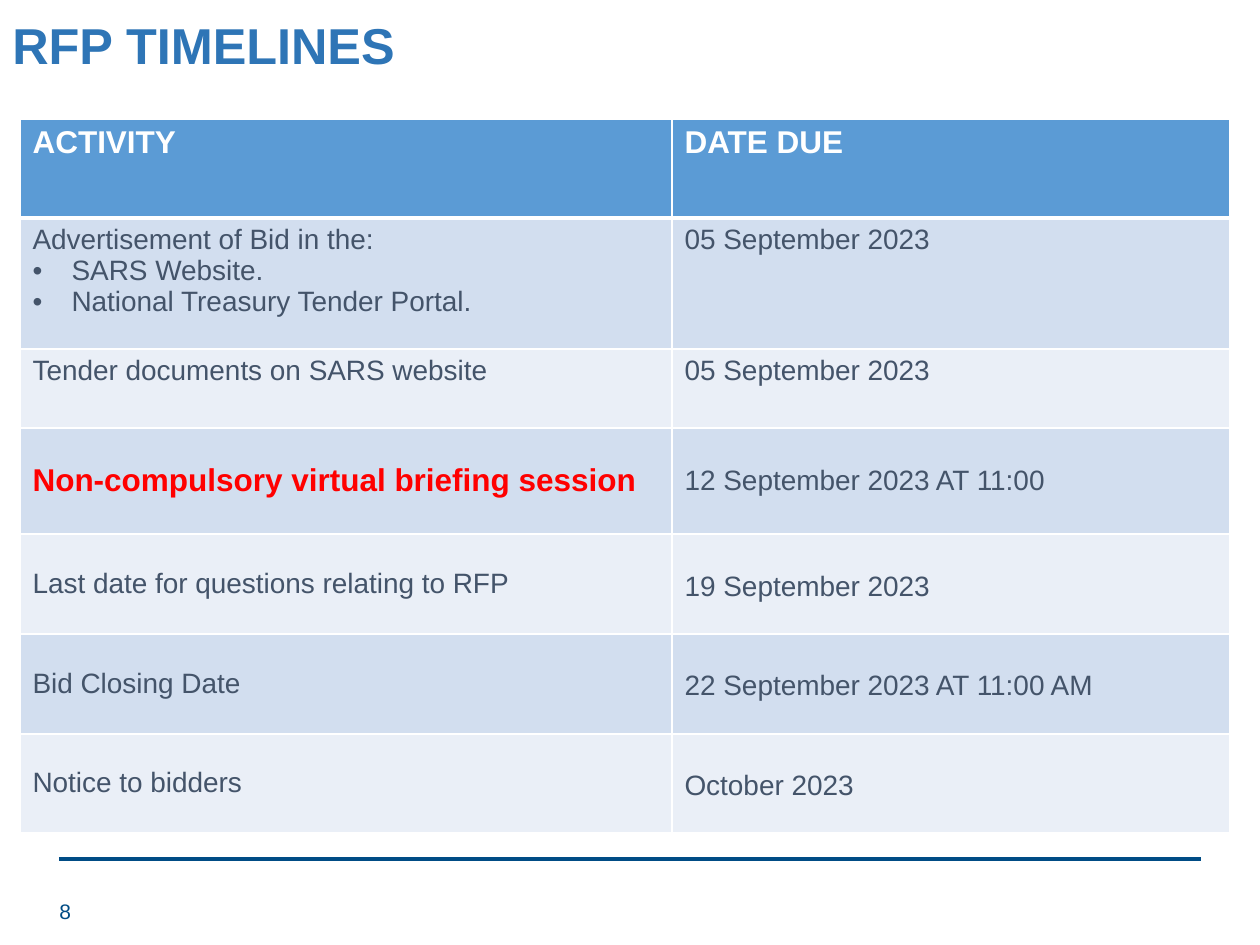
from lxml import etree
from pptx import Presentation
from pptx.dml.color import RGBColor
from pptx.enum.shapes import MSO_CONNECTOR
from pptx.enum.text import MSO_ANCHOR
from pptx.oxml.ns import qn
from pptx.util import Emu, Pt

PX = 914400 // 126
STRAIGHT = MSO_CONNECTOR.STRAIGHT
TOP, MIDDLE = MSO_ANCHOR.TOP, MSO_ANCHOR.MIDDLE

FONT = "Arial"
NAVY, TITLE_BLUE, SLATE, RED, WHITE = "004C85", "2E75B6", "44546A", "FF0000", "FFFFFF"
HEADER_FILL, BANDS = "5B9BD5", ("D2DEEF", "EAEFF7")

HEADINGS = ("ACTIVITY", "DATE DUE")
COLUMN_WIDTHS = (652, 558)
HEADER_HEIGHT = 99
BULLET_INDENT = 39
LOWERED_DATE_MARGIN = 37
# height, activity lines, date, whether the row sits lower in its cells
TIMELINE = (
    (131, ("Advertisement of Bid in the:", "• SARS Website.",
           "• National Treasury Tender Portal."), "05 September 2023", False),
    (79, ("Tender documents on SARS website",), "05 September 2023", False),
    (106, ("Non-compulsory virtual briefing session",), "12 September 2023 AT 11:00", True),
    (100, ("Last date for questions relating to RFP",), "19 September 2023", True),
    (100, ("Bid Closing Date",), "22 September 2023 AT 11:00 AM", True),
    (99, ("Notice to bidders",), "October 2023", True),
)
HIGHLIGHTED_ROW = 3


def px(length):
    return Emu(length * PX)


def color(hex_string):
    return RGBColor.from_string(hex_string)


def add_run(paragraph, text, size, hex_string, bold=False):
    run = paragraph.add_run()
    run.text = text
    font = run.font
    font.name, font.size, font.bold = FONT, Pt(size), bold
    font.color.rgb = color(hex_string)


def add_bullet(paragraph):
    properties = paragraph._p.get_or_add_pPr()
    properties.set("marL", str(px(BULLET_INDENT)))
    properties.set("indent", str(-px(BULLET_INDENT)))
    etree.SubElement(properties, qn("a:buFont"), typeface=FONT)
    etree.SubElement(properties, qn("a:buChar"), char="•")


def add_label(slide, box, text, size, hex_string, bold=False, anchor=TOP, spacing=1.0):
    frame = slide.shapes.add_textbox(*map(px, box)).text_frame
    frame.word_wrap = True
    frame.vertical_anchor = anchor
    frame.paragraphs[0].line_spacing = spacing
    add_run(frame.paragraphs[0], text, size, hex_string, bold)


def set_borders(cell, top=1, bottom=1):
    properties = cell._tc.get_or_add_tcPr()
    widths = (("a:lnL", 1), ("a:lnR", 1), ("a:lnT", top), ("a:lnB", bottom))
    for position, (tag, width) in enumerate(widths):
        line = etree.Element(qn(tag), w=str(Pt(width)))
        fill = etree.SubElement(line, qn("a:solidFill"))
        etree.SubElement(fill, qn("a:srgbClr"), val=WHITE)
        properties.insert(position, line)


def fill_cell(cell, lines, size, hex_string, fill, bold=False):
    cell.fill.solid()
    cell.fill.fore_color.rgb = color(fill)
    frame = cell.text_frame
    for number, line in enumerate(lines):
        paragraph = frame.add_paragraph() if number else frame.paragraphs[0]
        if line.startswith("• "):
            add_bullet(paragraph)
        add_run(paragraph, line.removeprefix("• "), size, hex_string, bold)


def add_timeline_table(slide, left, top):
    heights = [HEADER_HEIGHT] + [row[0] for row in TIMELINE]
    box = (left, top, sum(COLUMN_WIDTHS), sum(heights))
    table = slide.shapes.add_table(len(heights), len(COLUMN_WIDTHS), *map(px, box)).table
    for column, width in zip(table.columns, COLUMN_WIDTHS):
        column.width = px(width)
    for row, height in zip(table.rows, heights):
        row.height = px(height)

    for column, heading in enumerate(HEADINGS):
        cell = table.cell(0, column)
        fill_cell(cell, [heading], 18, WHITE, HEADER_FILL, bold=True)
        set_borders(cell, bottom=3)

    for number, (_, activity_lines, due, lowered) in enumerate(TIMELINE, start=1):
        activity, date = table.cell(number, 0), table.cell(number, 1)
        band = BANDS[(number - 1) % 2]
        highlighted = number == HIGHLIGHTED_ROW
        fill_cell(activity, activity_lines, 18 if highlighted else 16,
                  RED if highlighted else SLATE, band, bold=highlighted)
        fill_cell(date, [due], 16, SLATE, band)
        if lowered:
            activity.vertical_anchor = MIDDLE
            date.margin_top = px(LOWERED_DATE_MARGIN)
        for cell in (activity, date):
            set_borders(cell, top=3 if number == 1 else 1)


def add_footer(slide, left, top, width, page):
    rule = slide.shapes.add_connector(STRAIGHT, px(left), px(top), px(left + width), px(top))
    rule.line.color.rgb = color(NAVY)
    rule.line.width = Pt(2)
    etree.SubElement(rule._element.spPr, qn("a:effectLst"))
    add_label(slide, (left - 12, top + 27, 283, 50), page, 12, NAVY, anchor=MIDDLE)


def main():
    deck = Presentation()
    deck.slide_width, deck.slide_height = px(1260), px(945)
    slide = deck.slides.add_slide(deck.slide_layouts[6])
    add_label(slide, (0, 15, 1086, 73), "RFP TIMELINES", 28.8, TITLE_BLUE,
              bold=True, spacing=0.9)
    add_timeline_table(slide, 20, 119)
    add_footer(slide, 59, 859, 1142, "8")
    deck.save("out.pptx")


if __name__ == "__main__":
    main()
